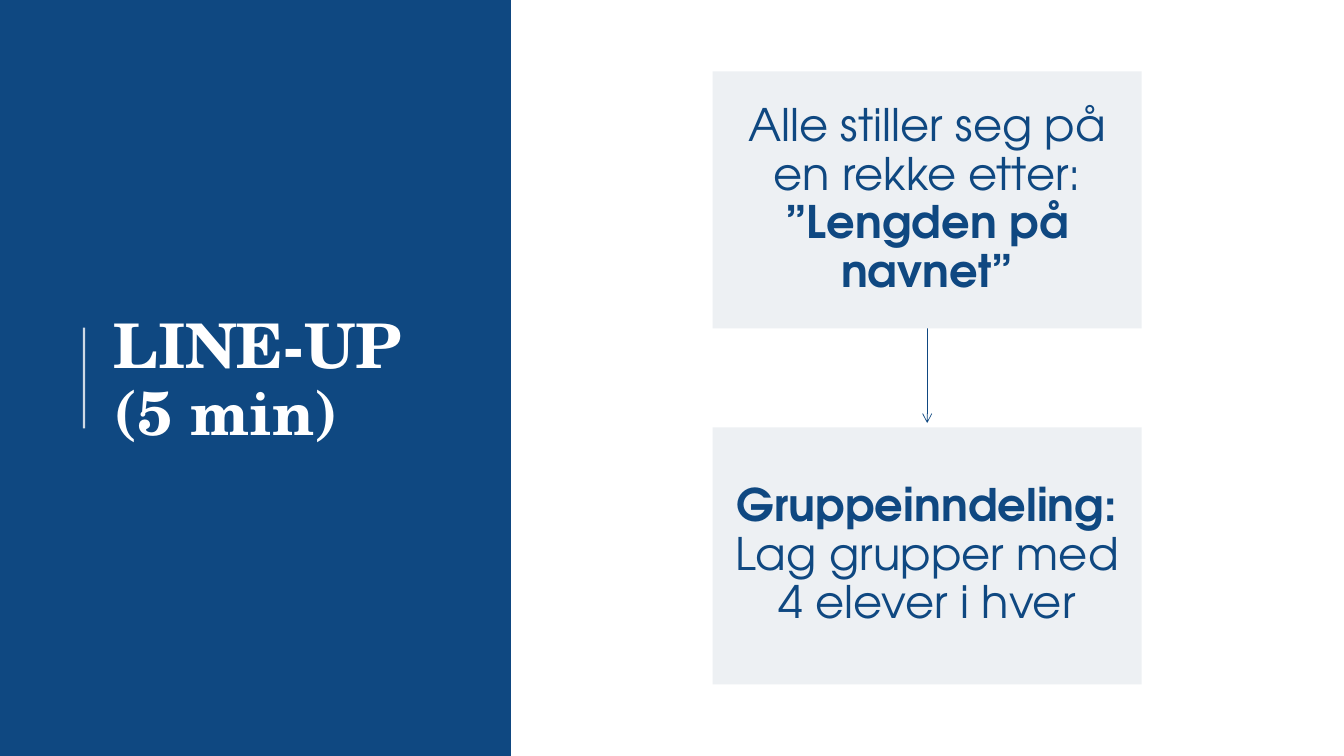
from pptx import Presentation
from pptx.dml.color import RGBColor as Rgb
from pptx.enum.shapes import MSO_CONNECTOR as Conn, MSO_SHAPE as Shape
from pptx.enum.text import MSO_ANCHOR as Anchor, MSO_AUTO_SIZE as Fit, PP_ALIGN as Align
from pptx.oxml.ns import qn
from pptx.util import Pt
from lxml.etree import SubElement as Sub

COLOR = {"navy": "0F4881", "pale": "EDF0F3", "white": "FFFFFF"}
HEAD, BODY = "TeX Gyre Schola", "TeX Gyre Adventor"

# Step boxes: left, top, width, height and gap
LEFT, TOP, WIDE, HIGH, GAP = 509, 51, 306.6, 183.6, 70.6
STEPS = [
    [("Alle stiller seg på en rekke etter: ", False), ("”Lengden på navnet”", True)],
    [("Gruppeinndeling:", True), (" Lag grupper med 4 elever i hver", False)],
]


def rgb(name):
    return Rgb.from_string(COLOR[name])


def add_run(para, text, font, size, color, bold):
    run = para.add_run()
    run.text = text
    run.font.name = font
    run.font.size = Pt(size)
    run.font.bold = bold
    run.font.color.rgb = rgb(color)


def add_rect(slide, x, y, w, h, color):
    rect = slide.shapes.add_shape(Shape.RECTANGLE, Pt(x), Pt(y), Pt(w), Pt(h))
    rect.shadow.inherit = False
    rect.fill.solid()
    rect.fill.fore_color.rgb = rgb(color)
    rect.line.fill.background()
    return rect


def add_line(slide, x, top, end, color, width):
    line = slide.shapes.add_connector(Conn.STRAIGHT, Pt(x), Pt(top), Pt(x), Pt(end))
    line.line.color.rgb = rgb(color)
    line.line.width = Pt(width)
    Sub(line.element.spPr, qn("a:effectLst"))
    return line


def add_step(slide, y, parts):
    frame = add_rect(slide, LEFT, y, WIDE, HIGH, "pale").text_frame
    frame.word_wrap = True
    frame.vertical_anchor = Anchor.MIDDLE
    frame.margin_left = frame.margin_right = Pt(15)
    frame.margin_top = frame.margin_bottom = Pt(16)
    para = frame.paragraphs[0]
    para.alignment = Align.CENTER
    para.line_spacing = 0.9
    for text, bold in parts:
        add_run(para, text, BODY, 32, "navy", bold)


def set_title(slide, lines):
    title = slide.shapes.title
    title.left, title.top, title.width, title.height = Pt(74), Pt(56), Pt(266), Pt(433.5)
    # Bring the title in front of the panel
    title.element.getparent().append(title.element)
    frame = title.text_frame
    frame.word_wrap = True
    frame.auto_size = Fit.NONE
    frame.vertical_anchor = Anchor.MIDDLE
    para = frame.paragraphs[0]
    para.alignment = Align.LEFT
    para.line_spacing = 0.9
    for i, text in enumerate(lines):
        if i:
            para.add_line_break()
        add_run(para, text, HEAD, 44, "white", True)


def main():
    deck = Presentation()
    deck.slide_width, deck.slide_height = Pt(960), Pt(540)
    slide = deck.slides.add_slide(deck.slide_layouts[5])

    # Title panel with its accent bar
    add_rect(slide, 0, 0, 365, 540, "navy")
    bar = add_line(slide, 60, 234, 306, "white", 1.5)
    tint = bar.line.fill.fore_color and bar.element.spPr.find(".//" + qn("a:srgbClr"))
    Sub(tint, qn("a:alpha"), val="80000")
    set_title(slide, ["LINE-UP", "(5 min)"])

    # Arrow between the steps
    low = TOP + HIGH
    arrow = add_line(slide, LEFT + WIDE / 2, low, low + GAP - 3, "navy", 0.5)
    Sub(arrow.line.fill and arrow.element.spPr.find(qn("a:ln")), qn("a:tailEnd"), type="arrow")

    # Steps
    for i, parts in enumerate(STEPS):
        add_step(slide, TOP + i * (HIGH + GAP), parts)

    deck.save("out.pptx")


if __name__ == "__main__":
    main()
